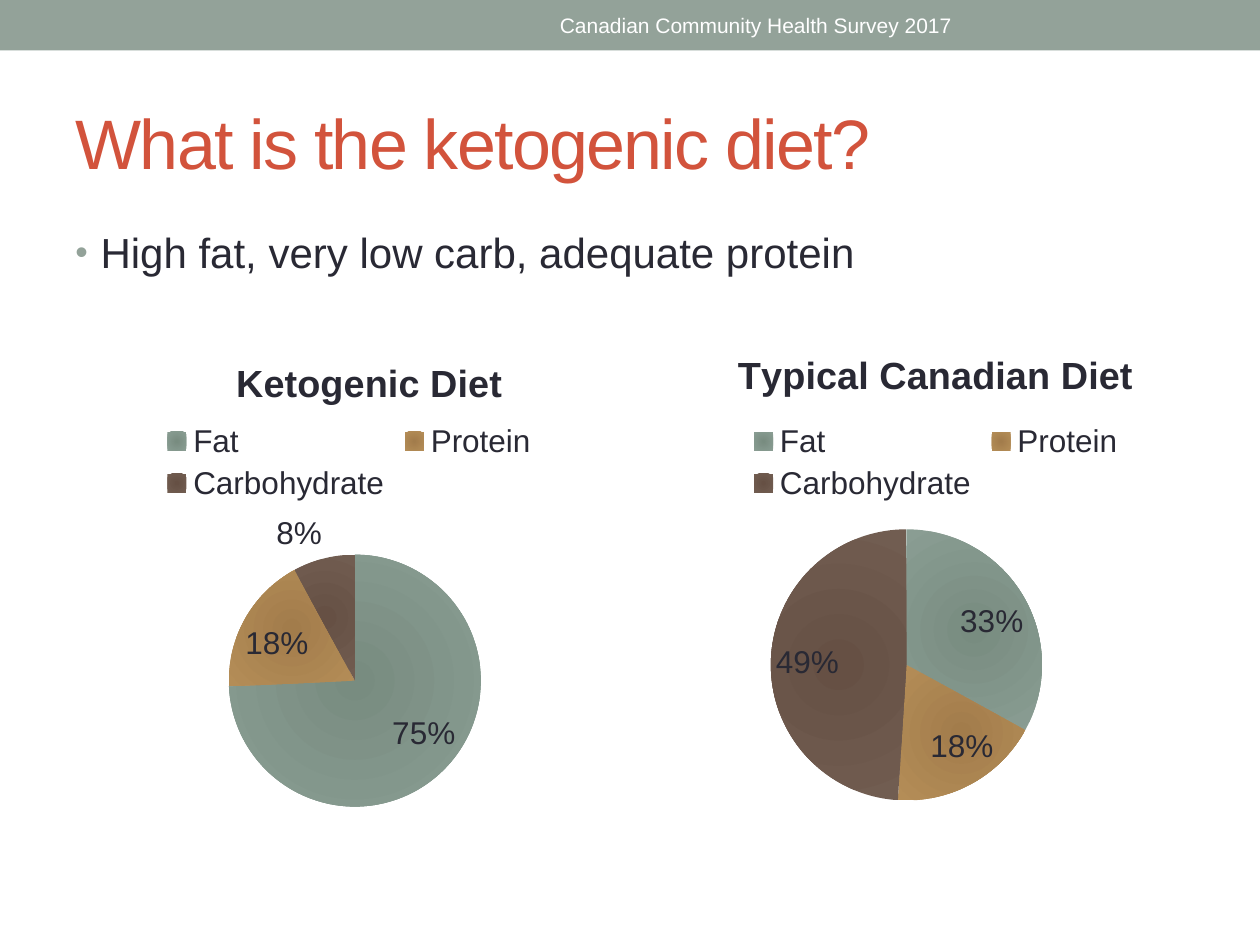
import dataclasses
from typing import Optional

import pptx
import pptx.chart.data
import pptx.dml.color
import pptx.enum.chart
import pptx.enum.shapes
import pptx.enum.text
import pptx.oxml
import pptx.oxml.ns
import pptx.util

Pt = pptx.util.Pt
qn = pptx.oxml.ns.qn
ALIGN = pptx.enum.text.PP_ALIGN
ANCHOR = pptx.enum.text.MSO_ANCHOR
NS = pptx.oxml.ns.nsdecls("a", "c")

SAGE, RED, INK, WHITE = "93A299", "D2533C", "292934", "FFFFFF"
CATEGORIES = ("Fat", "Protein", "Carbohydrate")
# Centre and edge colour of each slice
SLICES = (("788C80", "8A9D93"), ("A27C4B", "B48D57"), ("665044", "715D51"))


@dataclasses.dataclass
class Box:
    x: float
    y: float
    w: float
    h: float

    def place(self) -> tuple:
        return Pt(self.x), Pt(self.y), Pt(self.w), Pt(self.h)


@dataclasses.dataclass
class Pie:
    title: str
    series: str
    values: tuple
    box: Box
    plot: Box
    title_at: Optional[tuple] = None


PIES = (
    Pie("Ketogenic Diet", "Series 1", (75, 18, 8),
        Box(0, 186.5, 399, 296), Box(130.8, 317, 144, 144), (131, 201)),
    Pie("Typical Canadian Diet", "Typical Canadian Diet", (33, 18, 49),
        Box(336, 186.5, 397.5, 299.5), Box(440.5, 302.5, 155, 155)),
)


def rgb(value: str) -> pptx.dml.color.RGBColor:
    return pptx.dml.color.RGBColor.from_string(value)


def set_font(font, color: str, **formats) -> None:
    for name, value in {"name": "Arial", **formats}.items():
        setattr(font, name, value)
    font.color.rgb = rgb(color)


def write(sp, text: str, size: float, color: str, anchor, align=None):
    tf = sp.text_frame
    formats = {"word_wrap": True, "vertical_anchor": anchor,
               "auto_size": pptx.enum.text.MSO_AUTO_SIZE.NONE}
    for name, value in formats.items():
        setattr(tf, name, value)
    p = tf.paragraphs[0]
    p.alignment = align
    r = p.add_run()
    r.text = text
    set_font(r.font, color, size=Pt(size))
    return p


def add_bullet(p, indent: float, color: str) -> None:
    pPr = p._p.get_or_add_pPr()
    pPr.set("marL", str(Pt(indent)))
    pPr.set("indent", str(-Pt(indent)))
    for xml in (f'<a:buClr {NS}><a:srgbClr val="{color}"/></a:buClr>',
                f'<a:buSzPct {NS} val="85000"/>',
                f'<a:buFont {NS} typeface="Arial"/>',
                f'<a:buChar {NS} char="•"/>'):
        pPr.append(pptx.oxml.parse_xml(xml))


def manual_layout(parent, after: str, values: dict, inner: bool = False) -> None:
    """Place a chart part by fractions of the chart area."""
    for old in parent.findall(qn("c:layout")):
        parent.remove(old)
    target = '<c:layoutTarget val="inner"/>' if inner else ""
    modes = '<c:xMode val="edge"/><c:yMode val="edge"/>'
    parts = "".join(f'<c:{k} val="{v:.4f}"/>' for k, v in values.items())
    layout = pptx.oxml.parse_xml(
        f"<c:layout {NS}><c:manualLayout>{target}{modes}{parts}"
        "</c:manualLayout></c:layout>")
    previous = parent.find(qn(after)) if after else None
    if previous is None:
        parent.insert(0, layout)
    else:
        previous.addnext(layout)


def radial_fill(fill, colors: tuple) -> None:
    fill.gradient()
    for stop, color in zip(fill.gradient_stops, colors):
        stop.color.rgb = rgb(color)
    grad = fill._xPr.find(qn("a:gradFill"))
    grad.replace(grad.find(qn("a:lin")), pptx.oxml.parse_xml(
        f'<a:path {NS} path="circle"><a:fillToRect l="50000" t="50000" '
        'r="50000" b="50000"/></a:path>'))


def add_pie(s, pie: Pie) -> None:
    data = pptx.chart.data.CategoryChartData()
    data.categories = CATEGORIES
    data.add_series(pie.series, pie.values)
    chart = s.shapes.add_chart(pptx.enum.chart.XL_CHART_TYPE.PIE,
                               *pie.box.place(), data).chart
    set_font(chart.font, INK, size=Pt(18))

    # Title and legend
    chart.has_title = True
    p = chart.chart_title.text_frame.paragraphs[0]
    r = p.add_run()
    r.text = pie.title
    set_font(r.font, INK, size=Pt(21.6), bold=True)
    box = pie.box
    if pie.title_at:
        x, y = pie.title_at
        manual_layout(chart.chart_title._element, "c:tx",
                      {"x": (x - box.x) / box.w, "y": (y - box.y) / box.h})
    chart.has_legend = True
    chart.legend.position = pptx.enum.chart.XL_LEGEND_POSITION.TOP
    chart.legend.include_in_layout = False

    # Slices and labels
    plot = chart.plots[0]
    plot.vary_by_categories = True
    for i, colors in enumerate(SLICES):
        radial_fill(plot.series[0].points[i].format.fill, colors)
    plot.has_data_labels = True
    formats = {"show_value": True, "number_format": '0"%"',
               "number_format_is_linked": False,
               "position": pptx.enum.chart.XL_LABEL_POSITION.BEST_FIT}
    for name, value in formats.items():
        setattr(plot.data_labels, name, value)
    area = pie.plot
    manual_layout(chart._chartSpace.chart.plotArea, "",
                  {"x": (area.x - box.x) / box.w, "y": (area.y - box.y) / box.h,
                   "w": area.w / box.w, "h": area.h / box.h}, inner=True)


def main() -> None:
    prs = pptx.Presentation()
    prs.slide_width, prs.slide_height = Pt(720), Pt(540)
    s = prs.slides.add_slide(prs.slide_layouts[5])

    # Top band
    band = s.shapes.add_shape(pptx.enum.shapes.MSO_SHAPE.RECTANGLE,
                              *Box(0, 0, 720, 28.8).place())
    band.shadow.inherit = False
    band.fill.solid()
    band.fill.fore_color.rgb = rgb(SAGE)
    band.line.fill.background()
    source = s.shapes.add_textbox(*Box(270, 1.5, 324, 26).place())
    write(source, "Canadian Community Health Survey 2017", 12, WHITE,
          ANCHOR.MIDDLE, ALIGN.CENTER)

    # Title
    title = s.shapes.title
    title.left, title.top, title.width, title.height = Box(36, 42, 648, 78).place()
    p = write(title, "What is the ketogenic diet?", 40, RED,
              ANCHOR.MIDDLE, ALIGN.LEFT)
    p.runs[0].font._element.set("spc", "-100")

    # Bullet
    body = s.shapes.add_textbox(*Box(36, 126, 648, 384).place())
    p = write(body, "High fat, very low carb, adequate protein", 24, INK, ANCHOR.TOP)
    add_bullet(p, 14.4, SAGE)

    # Charts
    for pie in PIES:
        add_pie(s, pie)

    prs.save("out.pptx")


if __name__ == "__main__":
    main()
